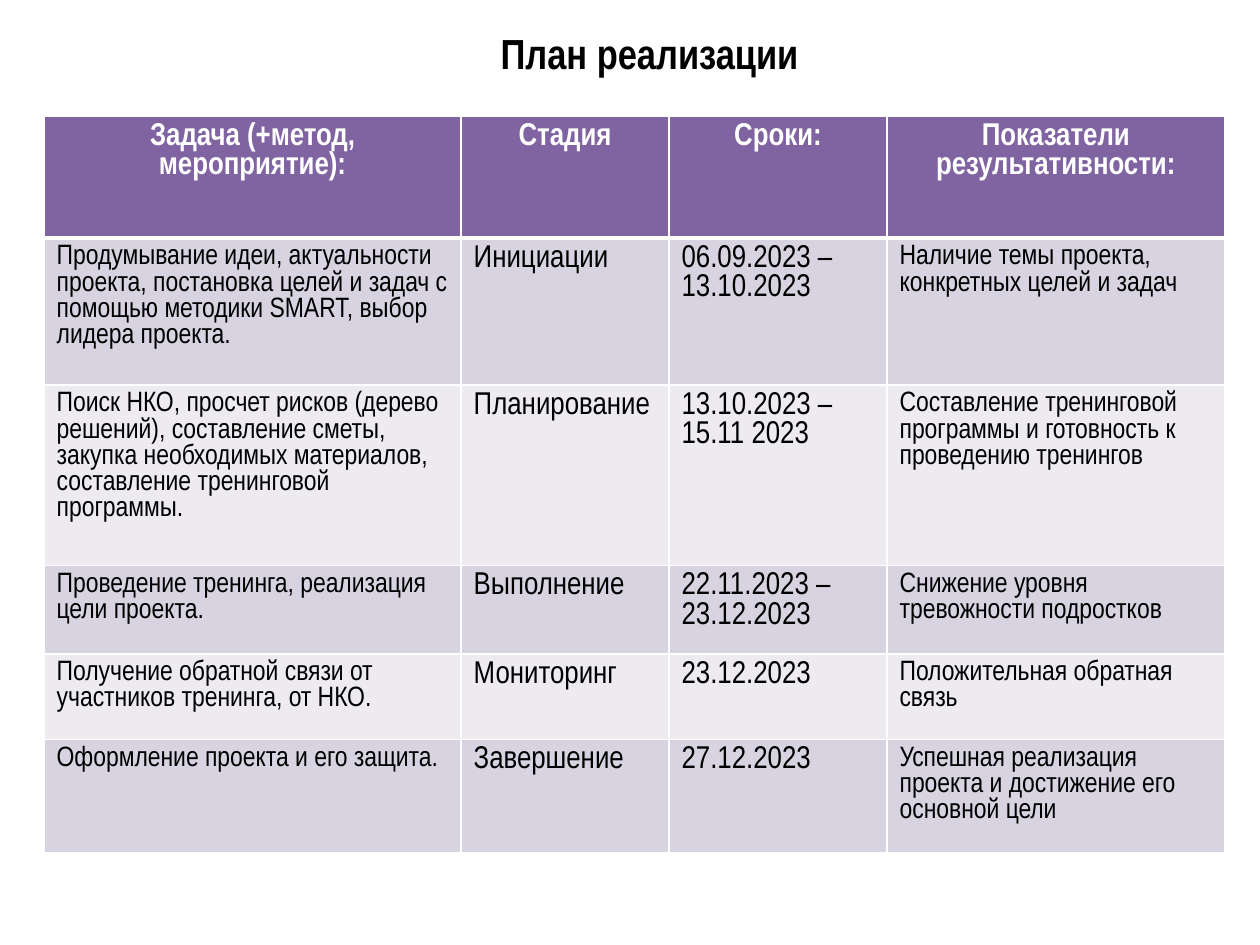
from pptx import Presentation
from pptx.dml.color import RGBColor
from pptx.enum.text import MSO_AUTO_SIZE, PP_ALIGN
from pptx.oxml.ns import qn
from pptx.util import Inches, Pt
from lxml.etree import SubElement

TITLE = "План реализации"
HEADERS = ["Задача (+метод, мероприятие):", "Стадия", "Сроки:", "Показатели результативности:"]
STAGES = [
    ("Продумывание идеи, актуальности проекта, постановка целей и задач с помощью методики SMART, "
     "выбор лидера проекта.",
     "Инициации", "06.09.2023 – 13.10.2023", "Наличие темы проекта, конкретных целей и задач"),
    ("Поиск НКО, просчет рисков (дерево решений), составление сметы, закупка необходимых материалов, "
     "составление тренинговой программы.",
     "Планирование", "13.10.2023 – 15.11 2023",
     "Составление тренинговой программы и готовность к проведению тренингов"),
    ("Проведение тренинга, реализация цели проекта.",
     "Выполнение", "22.11.2023 – 23.12.2023", "Снижение уровня тревожности подростков"),
    ("Получение обратной связи от участников тренинга, от НКО.",
     "Мониторинг", "23.12.2023", "Положительная обратная связь"),
    ("Оформление проекта и его защита.",
     "Завершение", "27.12.2023", "Успешная реализация проекта и достижение его основной цели"),
]
COLORS = {"header": "8064A2", "odd": "D8D3E0", "even": "EDEAF0", "white": "FFFFFF", "text": "000000"}
FONT = "Arial Narrow"
COLUMN_WIDTHS = [3.31, 1.65, 1.73, 2.68]
COLUMN_SIZES = [16, 18, 18, 16]
HEADER_HEIGHT, ROW_HEIGHT = 0.97, 0.68


def write(frame, text, size, color, bold=False, align=None):
    frame.text = text
    paragraph = frame.paragraphs[0]
    paragraph.alignment = align
    font = paragraph.runs[0].font
    font.name, font.size, font.bold = FONT, Pt(size), bold
    font.color.rgb = RGBColor.from_string(COLORS[color])


def add_borders(cell, bottom):
    properties = cell._tc.get_or_add_tcPr()
    sides = [("a:lnL", 1), ("a:lnR", 1), ("a:lnT", 1), ("a:lnB", bottom)]
    for position, (side, width) in enumerate(sides):
        line = SubElement(properties, qn(side), w=str(Pt(width)))
        fill = SubElement(line, qn("a:solidFill"))
        SubElement(fill, qn("a:srgbClr"), val=COLORS["white"])
        properties.insert(position, line)


def main():
    deck = Presentation()
    deck.slide_width, deck.slide_height = Inches(10), Inches(7.5)
    page = deck.slides.add_slide(deck.slide_layouts[6])

    title = page.shapes.add_textbox(Inches(2.24), Inches(0.17), Inches(5.83), Inches(0.5))
    title.text_frame.word_wrap = True
    title.text_frame.auto_size = MSO_AUTO_SIZE.SHAPE_TO_FIT_TEXT
    write(title.text_frame, TITLE, 24, "text", True, PP_ALIGN.CENTER)

    rows = [HEADERS, *STAGES]
    heights = [HEADER_HEIGHT] + [ROW_HEIGHT] * len(STAGES)
    table = page.shapes.add_table(len(rows), len(HEADERS), Inches(0.35), Inches(0.92),
                                  Inches(sum(COLUMN_WIDTHS)), Inches(sum(heights))).table
    for column, width in zip(table.columns, COLUMN_WIDTHS):
        column.width = Inches(width)

    for row_index, texts in enumerate(rows):
        table.rows[row_index].height = Inches(heights[row_index])
        is_header = row_index == 0
        shade = "header" if is_header else "odd" if row_index % 2 else "even"
        for column_index, text in enumerate(texts):
            cell = table.cell(row_index, column_index)
            cell.fill.solid()
            cell.fill.fore_color.rgb = RGBColor.from_string(COLORS[shade])
            add_borders(cell, 3 if is_header else 1)
            if is_header:
                write(cell.text_frame, text, 18, "white", True, PP_ALIGN.CENTER)
            else:
                write(cell.text_frame, text, COLUMN_SIZES[column_index], "text")

    deck.save("out.pptx")


if __name__ == "__main__":
    main()
